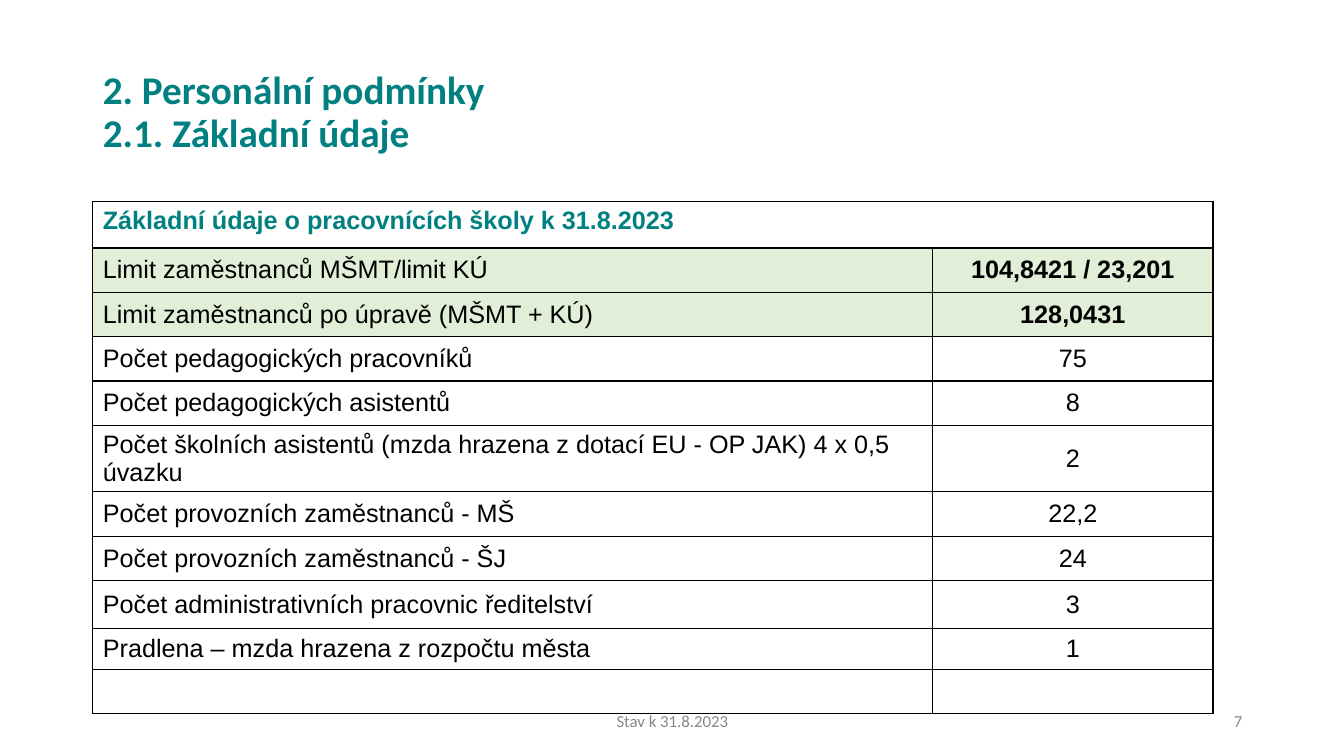
from lxml.etree import SubElement
from pptx import Presentation
from pptx.dml.color import RGBColor
from pptx.enum.text import MSO_ANCHOR, MSO_AUTO_SIZE, PP_ALIGN
from pptx.oxml.ns import qn
from pptx.util import Inches, Pt

TEAL, BLACK, GREY, GREEN, WHITE = "008080", "000000", "888888", "E1EFD8", "FFFFFF"

TABLE_HEADING = "Základní údaje o pracovnících školy k 31.8.2023"
STAFF_LIMITS = [
    ("Limit zaměstnanců MŠMT/limit KÚ", "104,8421 / 23,201"),
    ("Limit zaměstnanců po úpravě (MŠMT + KÚ)", "128,0431"),
]
STAFF_COUNTS = [
    ("Počet pedagogických pracovníků", "75"),
    ("Počet pedagogických asistentů", "8"),
    ("Počet školních asistentů (mzda hrazena z dotací EU - OP JAK) 4 x 0,5 úvazku", "2"),
    ("Počet provozních zaměstnanců - MŠ", "22,2"),
    ("Počet provozních zaměstnanců - ŠJ", "24"),
    ("Počet administrativních pracovnic ředitelství", "3"),
    ("Pradlena – mzda hrazena z rozpočtu města", "1"),
    ("", ""),
]
COLUMN_WIDTHS = [8.33, 2.78]
ROW_HEIGHTS = [0.46] + [0.44] * 7 + [0.48, 0.4, 0.44]


def color(hex_value):
    return RGBColor.from_string(hex_value)


def write(text_frame, text, size=18, font="Arial", fill=BLACK, bold=False,
          align=PP_ALIGN.LEFT, line_spacing=None):
    """Put one formatted paragraph into a text frame."""
    paragraph = text_frame.paragraphs[0]
    paragraph.text = text
    paragraph.alignment = align
    paragraph.line_spacing = line_spacing
    for run in paragraph.runs:
        run.font.size = Pt(size)
        run.font.name = font
        run.font.bold = bold
        run.font.color.rgb = color(fill)


def add_borders(cell):
    properties = cell._tc.get_or_add_tcPr()
    for side in ("a:lnL", "a:lnR", "a:lnT", "a:lnB"):
        line = SubElement(properties, qn(side), w=str(Pt(1)))
        SubElement(SubElement(line, qn("a:solidFill")), qn("a:srgbClr"), val=BLACK)


class StaffSlide:
    def __init__(self, presentation):
        self.slide = presentation.slides.add_slide(presentation.slide_layouts[5])

    def title(self, text, left, top, width, height):
        shape = self.slide.shapes.title
        shape.left, shape.top = Inches(left), Inches(top)
        shape.width, shape.height = Inches(width), Inches(height)
        shape.text_frame.auto_size = MSO_AUTO_SIZE.NONE
        shape.text_frame.vertical_anchor = MSO_ANCHOR.MIDDLE
        write(shape.text_frame, text, size=28, font="Calibri", fill=TEAL,
              bold=True, line_spacing=0.9)

    def footer(self, text, left, width, align):
        shape = self.slide.shapes.add_textbox(
            Inches(left), Inches(6.95), Inches(width), Inches(0.4))
        shape.text_frame.word_wrap = True
        shape.text_frame.vertical_anchor = MSO_ANCHOR.MIDDLE
        write(shape.text_frame, text, size=12, font="Calibri", fill=GREY, align=align)

    def cell(self, cell, text, background=WHITE, anchor=MSO_ANCHOR.MIDDLE, **text_format):
        add_borders(cell)
        cell.fill.solid()
        cell.fill.fore_color.rgb = color(background)
        cell.vertical_anchor = anchor
        write(cell.text_frame, text, **text_format)

    def table(self, left, top):
        table = self.slide.shapes.add_table(
            len(ROW_HEIGHTS), len(COLUMN_WIDTHS), Inches(left), Inches(top),
            Inches(sum(COLUMN_WIDTHS)), Inches(sum(ROW_HEIGHTS))).table
        table.first_row = table.horz_banding = False
        for column, width in zip(table.columns, COLUMN_WIDTHS):
            column.width = Inches(width)
        for row, height in zip(table.rows, ROW_HEIGHTS):
            row.height = Inches(height)

        heading = table.cell(0, 0)
        heading.merge(table.cell(0, 1))
        self.cell(heading, TABLE_HEADING, anchor=MSO_ANCHOR.TOP, fill=TEAL, bold=True)
        add_borders(table.cell(0, 1))
        for index, (label, value) in enumerate(STAFF_LIMITS + STAFF_COUNTS, start=1):
            is_limit = index <= len(STAFF_LIMITS)
            background = GREEN if is_limit else WHITE
            self.cell(table.cell(index, 0), label, background)
            self.cell(table.cell(index, 1), value, background,
                      bold=is_limit, align=PP_ALIGN.CENTER)


def main():
    presentation = Presentation()
    presentation.slide_width, presentation.slide_height = Inches(13.33), Inches(7.5)
    slide = StaffSlide(presentation)
    slide.title("2. Personální podmínky\v2.1. Základní údaje", 0.92, 0.4, 11.5, 1.45)
    slide.table(0.92, 2)
    slide.footer("Stav k 31.8.2023", 4.42, 4.5, PP_ALIGN.CENTER)
    slide.footer("7", 9.42, 3, PP_ALIGN.RIGHT)
    presentation.save("out.pptx")


if __name__ == "__main__":
    main()
